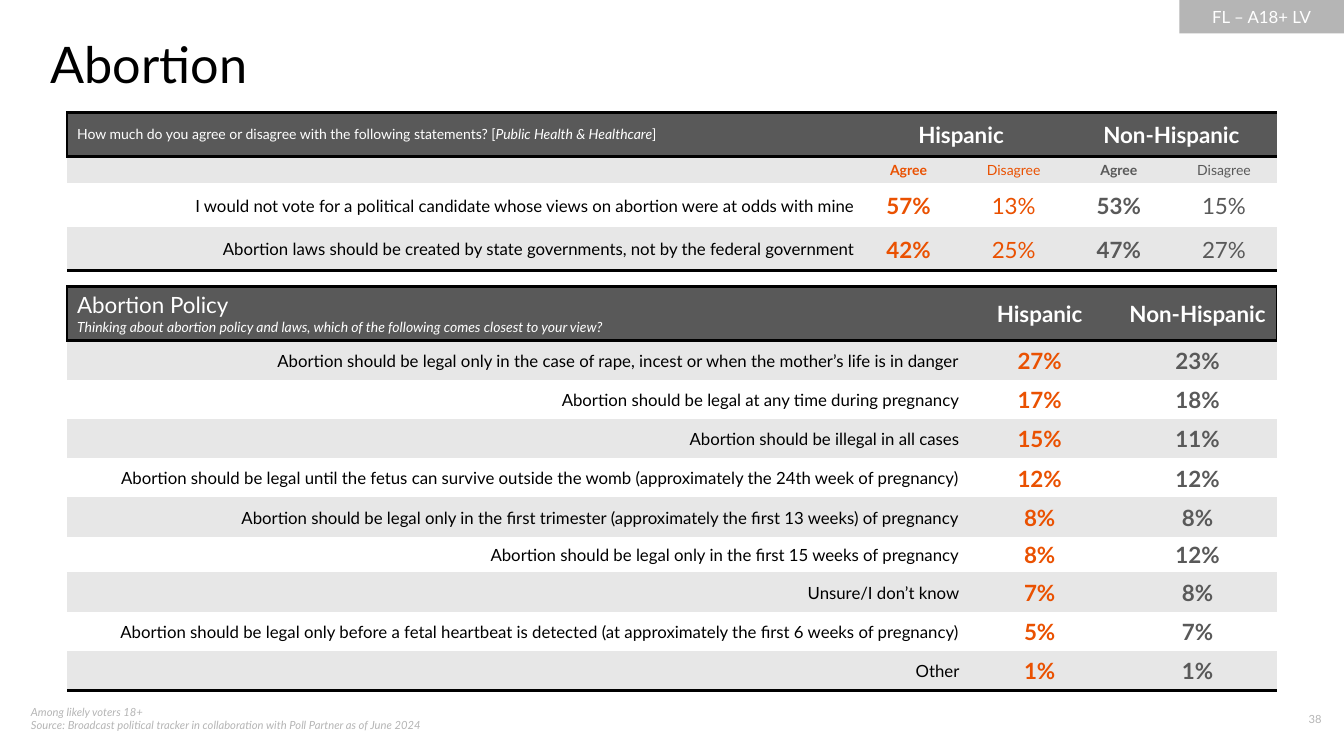
from lxml.etree import SubElement
from pptx import Presentation
from pptx.dml.color import RGBColor
from pptx.enum.shapes import MSO_SHAPE
from pptx.enum.text import MSO_ANCHOR as ANCHOR, PP_ALIGN as ALIGN
from pptx.oxml.ns import qn
from pptx.util import Cm, Pt

FONT = "Lato"
BLACK, WHITE, ORANGE, SLATE = "000000", "FFFFFF", "EA5101", "595959"
BAND, PALE = "E7E7E7", "B5B5B5"

TITLE = "Abortion"
AUDIENCE = "FL – A18+ LV"
PAGE = "38"
FOOTNOTE = [
    "Among likely voters 18+",
    "Source: Broadcast political tracker in collaboration with Poll Partner as of June 2024",
]
GROUPS = ["Hispanic", "Non-Hispanic"]
GROUP_COLORS = [ORANGE, SLATE]

AGREE_QUESTION = [
    ("How much do you agree or disagree with the following statements? [", False),
    ("Public Health & Healthcare", True),
    ("]", False),
]
ANSWERS = ["Agree", "Disagree"]
STATEMENTS = [
    ("I would not vote for a political candidate whose views on abortion were at odds with mine",
     "57%", "13%", "53%", "15%"),
    ("Abortion laws should be created by state governments, not by the federal government",
     "42%", "25%", "47%", "27%"),
]

POLICY_HEADING = "Abortion Policy"
POLICY_QUESTION = ("Thinking about abortion policy and laws, "
                   "which of the following comes closest to your view?")
POLICIES = [
    ("Abortion should be legal only in the case of rape, incest or when the mother’s life is in danger",
     "27%", "23%"),
    ("Abortion should be legal at any time during pregnancy", "17%", "18%"),
    ("Abortion should be illegal in all cases", "15%", "11%"),
    ("Abortion should be legal until the fetus can survive outside the womb "
     "(approximately the 24th week of pregnancy)", "12%", "12%"),
    ("Abortion should be legal only in the first trimester "
     "(approximately the first 13 weeks) of pregnancy", "8%", "8%"),
    ("Abortion should be legal only in the first 15 weeks of pregnancy", "8%", "12%"),
    ("Unsure/I don’t know", "7%", "8%"),
    ("Abortion should be legal only before a fetal heartbeat is detected "
     "(at approximately the first 6 weeks of pregnancy)", "5%", "7%"),
    ("Other", "1%", "1%"),
]

TABLE_LEFT, TABLE_WIDTH = 1.69, 30.48
AGREE_TOP, AGREE_COLUMN = 2.84, 2.65
AGREE_HEIGHTS = [1.1, 0.64, 1.1, 1.1]
POLICY_TOP, POLICY_COLUMN = 7.22, 3.98
POLICY_HEIGHTS = [1.32] + [0.99] * 5 + [0.9] + [0.99] * 3


def rgb(value):
    return RGBColor.from_string(value)


def write(paragraph, text, size=16, color=BLACK, bold=False, italic=False, align=ALIGN.LEFT):
    """Add one formatted run to the paragraph."""
    paragraph.alignment = align
    run = paragraph.add_run()
    run.text = text
    font = run.font
    font.name, font.size, font.bold, font.italic = FONT, Pt(size), bold, italic
    font.color.rgb = rgb(color)


def add_text_box(slide, lines, left, top, width, height, **style):
    frame = slide.shapes.add_textbox(Cm(left), Cm(top), Cm(width), Cm(height)).text_frame
    frame.word_wrap = True
    for index, line in enumerate(lines):
        paragraph = frame.add_paragraph() if index else frame.paragraphs[0]
        write(paragraph, line, **style)


def set_borders(cell, widths):
    """Draw black edges of the given point widths; all other edges stay empty."""
    properties = cell._tc.get_or_add_tcPr()
    for edge in "LRTB":
        line = SubElement(properties, qn(f"a:ln{edge}"))
        if edge in widths:
            line.set("w", str(Pt(widths[edge])))
            fill = SubElement(line, qn("a:solidFill"))
            SubElement(fill, qn("a:srgbClr")).set("val", BLACK)
        else:
            SubElement(line, qn("a:noFill"))


def add_banded_table(slide, top, heights, value_width, value_count):
    """Add a table with a dark header, banded rows and heavy rules."""
    columns = value_count + 1
    frame = slide.shapes.add_table(len(heights), columns, Cm(TABLE_LEFT), Cm(top),
                                   Cm(TABLE_WIDTH), Cm(sum(heights)))
    table = frame.table
    table.first_row = table.horz_banding = False
    table.columns[0].width = Cm(TABLE_WIDTH - value_width * value_count)
    for column in range(1, columns):
        table.columns[column].width = Cm(value_width)
    last = len(heights) - 1
    for row, height in enumerate(heights):
        table.rows[row].height = Cm(height)
        for column in range(columns):
            cell = table.cell(row, column)
            widths = {}
            if row <= 1:
                widths["T"] = 2.25
            if row in (0, last):
                widths["B"] = 2.25
            if row == 0 and column == 0:
                widths["L"] = 1
            if row == 0 and column == columns - 1:
                widths["R"] = 1
            set_borders(cell, widths)
            cell.fill.solid()
            cell.fill.fore_color.rgb = rgb(SLATE if row == 0 else BAND if row % 2 else WHITE)
            cell.vertical_anchor = ANCHOR.MIDDLE
    return table


def first_line(cell):
    return cell.text_frame.paragraphs[0]


def fill_row(table, row, label, values, formats):
    for column, text in enumerate((label, *values)):
        cell = table.cell(row, column)
        cell.margin_left = cell.margin_right = cell.margin_top = Cm(0.03)
        cell.margin_bottom = 0
        if column:
            write(first_line(cell), text, align=ALIGN.CENTER, **formats[column - 1])
        else:
            write(first_line(cell), text, size=12, align=ALIGN.RIGHT)


def add_agree_table(slide):
    formats = [dict(color=color, bold=answer == ANSWERS[0])
               for color in GROUP_COLORS for answer in ANSWERS]
    table = add_banded_table(slide, AGREE_TOP, AGREE_HEIGHTS, AGREE_COLUMN, len(formats))
    for text, italic in AGREE_QUESTION:
        write(first_line(table.cell(0, 0)), text, size=10, color=WHITE, italic=italic)
    for index, group in enumerate(GROUPS):
        start = 1 + index * len(ANSWERS)
        heading = table.cell(0, start)
        heading.merge(table.cell(0, start + len(ANSWERS) - 1))
        write(first_line(heading), group, color=WHITE, bold=True, align=ALIGN.CENTER)
    first_line(table.cell(1, 0))._p.get_or_add_endParaRPr().set("sz", "1000")
    for column, (answer, style) in enumerate(zip(ANSWERS * len(GROUPS), formats), 1):
        write(first_line(table.cell(1, column)), answer, size=10, align=ALIGN.CENTER, **style)
    for row, (label, *values) in enumerate(STATEMENTS, 2):
        fill_row(table, row, label, values, formats)


def add_policy_table(slide):
    formats = [dict(color=color, bold=True) for color in GROUP_COLORS]
    table = add_banded_table(slide, POLICY_TOP, POLICY_HEIGHTS, POLICY_COLUMN, len(formats))
    heading = table.cell(0, 0)
    heading.vertical_anchor = ANCHOR.BOTTOM
    write(first_line(heading), POLICY_HEADING, color=WHITE)
    write(heading.text_frame.add_paragraph(), POLICY_QUESTION, size=10, color=WHITE, italic=True)
    for column, group in enumerate(GROUPS, 1):
        write(first_line(table.cell(0, column)), group, color=WHITE, bold=True, align=ALIGN.CENTER)
    for row, (label, *values) in enumerate(POLICIES, 1):
        fill_row(table, row, label, values, formats)


def main():
    deck = Presentation()
    deck.slide_width, deck.slide_height = Cm(33.87), Cm(19.05)
    slide = deck.slides.add_slide(deck.slide_layouts[5])

    title = slide.shapes.title
    title.left, title.top, title.width, title.height = Cm(1.27), Cm(0.84), Cm(30.48), Cm(1.55)
    frame = title.text_frame
    frame.margin_left = frame.margin_right = frame.margin_top = frame.margin_bottom = 0
    frame.vertical_anchor = ANCHOR.TOP
    write(frame.paragraphs[0], TITLE, size=36)

    badge = slide.shapes.add_shape(MSO_SHAPE.RECTANGLE, Cm(29.72), 0, Cm(4.15), Cm(0.84))
    badge.shadow.inherit = False
    badge.fill.solid()
    badge.fill.fore_color.rgb = rgb(PALE)
    badge.line.fill.background()
    badge.text_frame.vertical_anchor = ANCHOR.MIDDLE
    write(badge.text_frame.paragraphs[0], AUDIENCE, size=12, color=WHITE, align=ALIGN.CENTER)

    add_text_box(slide, FOOTNOTE, 0.53, 17.65, 12.98, 1.02, size=8, color=PALE, italic=True)
    add_text_box(slide, [PAGE], 31.32, 17.83, 2.24, 0.69, size=8, color=PALE, align=ALIGN.RIGHT)
    add_policy_table(slide)
    add_agree_table(slide)
    deck.save("out.pptx")


if __name__ == "__main__":
    main()
